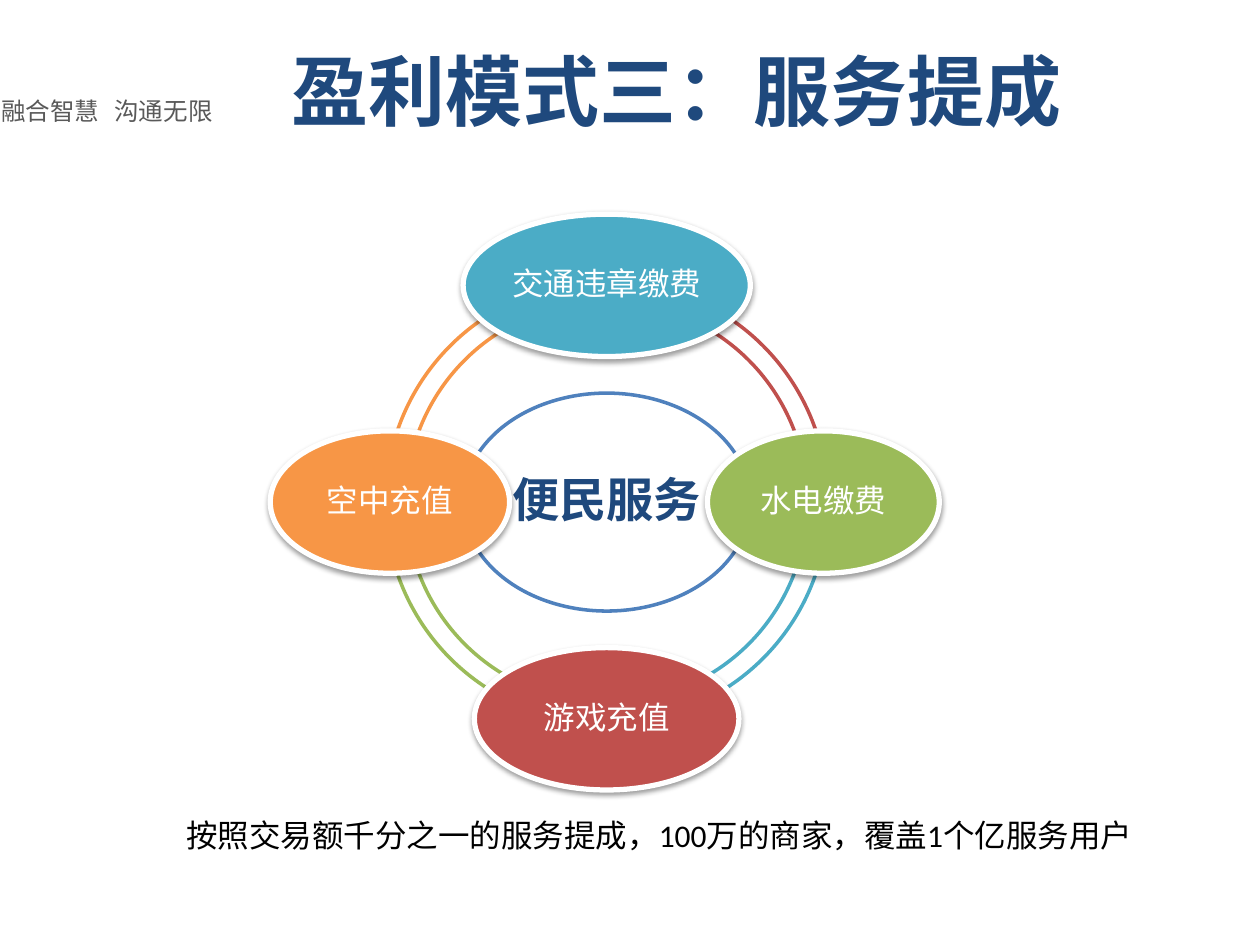
from lxml import etree
from pptx import Presentation
from pptx.dml.color import RGBColor
from pptx.enum.shapes import MSO_SHAPE
from pptx.enum.text import MSO_ANCHOR, PP_ALIGN
from pptx.oxml.ns import qn
from pptx.util import Inches, Pt

COLORS = {
    "navy": "1F497D", "blue": "4F81BD", "teal": "4BACC6", "green": "9BBB59",
    "red": "C0504D", "orange": "F79646", "gray": "595959",
    "white": "FFFFFF", "black": "000000",
}
CJK = "Noto Sans CJK SC"
TITLE = {"size": Pt(44), "bold": True, "name": CJK}
SLOGAN = {"size": Pt(14), "name": "Noto Sans CJK JP"}
HUB = {"size": Pt(27), "bold": True, "name": CJK}
NODE = {"size": Pt(18), "name": CJK}
NOTE = {"size": Pt(18), "name": "Calibri"}

# Label, fill, width, and direction from the hub in units of the ring radius
SERVICES = [
    ("交通违章缴费", "teal", 2.28, (0, -1)),
    ("水电缴费", "green", 1.84, (1, 0)),
    ("游戏充值", "red", 2.1, (0, 1)),
    ("空中充值", "orange", 1.9, (-1, 0)),
]
# Quarter arcs: colour, start and end angle in degrees
ARCS = [("orange", 180, 270), ("green", 90, 180), ("teal", 0, 90), ("red", 270, 0)]


def rgb(color):
    return RGBColor.from_string(COLORS[color])


def add_span(para, text, style, color):
    span = para.add_run()
    span.text = text
    for key, value in style.items():
        setattr(span.font, key, value)
    span.font.color.rgb = rgb(color)
    # Chinese glyphs take their font from the East Asian slot
    face = style["name"] if "CJK" in style["name"] else CJK
    etree.SubElement(span.font._element, qn("a:ea"), typeface=face)


def add_text_box(page, box, wrap=True):
    frame = page.shapes.add_textbox(*map(Inches, box)).text_frame
    frame.word_wrap = wrap
    return frame.paragraphs[0]


def add_figure(page, kind, box, fill, line, weight):
    shape = page.shapes.add_shape(kind, *map(Inches, box))
    shape.shadow.inherit = False
    shape.fill.solid()
    shape.fill.fore_color.rgb = rgb(fill)
    shape.line.color.rgb = rgb(line)
    shape.line.width = Pt(weight)
    return shape


def add_label(shape, text, style, color, inset):
    frame = shape.text_frame
    frame.word_wrap = True
    frame.vertical_anchor = MSO_ANCHOR.MIDDLE
    for side in ("left", "top", "right", "bottom"):
        setattr(frame, f"margin_{side}", Inches(inset))
    para = frame.paragraphs[0]
    para.alignment = PP_ALIGN.CENTER
    para.line_spacing = 0.9
    add_span(para, text, style, color)


def add_soft_shadow(shape):
    effects = shape._element.spPr.find(qn("a:effectLst"))
    shadow = etree.SubElement(
        effects, qn("a:outerShdw"), blurRad=str(Pt(3.1)), dist=str(Pt(1.6)),
        dir=str(90 * 60000), rotWithShape="0")
    color = etree.SubElement(shadow, qn("a:srgbClr"), val=COLORS["black"])
    etree.SubElement(color, qn("a:alpha"), val="38000")


def centered(x, y, width, height):
    return x - width / 2, y - height / 2, width, height


def add_header(page, slogan_box, title_box):
    para = add_text_box(page, slogan_box, wrap=False)
    tabs = etree.SubElement(para._p.get_or_add_pPr(), qn("a:tabLst"))
    etree.SubElement(tabs, qn("a:tab"), pos=str(Inches(0.9)), algn="l")
    add_span(para, "融合智慧\t沟通无限", SLOGAN, "gray")

    para = add_text_box(page, title_box)
    para.alignment = PP_ALIGN.CENTER
    add_span(para, "盈利模式三：服务提成", TITLE, "navy")


def add_service_ring(page, box):
    left, top, width, height = box
    x, y = left + width / 2, top + height / 2
    radius = 1.72

    # Ring of quarter arcs
    for color, start, end in ARCS:
        arc = add_figure(page, MSO_SHAPE.BLOCK_ARC, box, "white", color, 2)
        for index, value in enumerate((start * 0.6, end * 0.6, 0.046)):
            arc.adjustments[index] = value

    # Hub
    hub = add_figure(page, MSO_SHAPE.OVAL, centered(x, y, 2.28, 1.73),
                     "white", "blue", 2)
    add_label(hub, "便民服务", HUB, "navy", 0.04)

    # Services around the hub
    for text, color, node_width, (across, down) in SERVICES:
        node_box = centered(x + across * radius, y + down * radius,
                            node_width, 1.13)
        node = add_figure(page, MSO_SHAPE.OVAL, node_box, color, "white", 3)
        add_soft_shadow(node)
        add_label(node, text, NODE, "white", 0.03)


def add_note(page, box):
    para = add_text_box(page, box)
    add_span(para, "按照", NOTE, "black")
    add_span(para, "交易额", NODE, "black")
    add_span(para, "千分之一的服务提成，100万的商家，覆盖1个亿服务用户", NOTE, "black")


def main():
    deck = Presentation()
    deck.slide_width, deck.slide_height = Inches(10), Inches(7.5)
    page = deck.slides.add_slide(deck.slide_layouts[6])
    add_header(page, (-0.09, 0.71, 2.11, 0.34), (0.87, 0.3, 9, 1.25))
    add_service_ring(page, (3.06, 2.23, 3.51, 3.51))
    add_note(page, (1.38, 6.43, 7.78, 0.4))
    deck.save("out.pptx")


if __name__ == "__main__":
    main()
